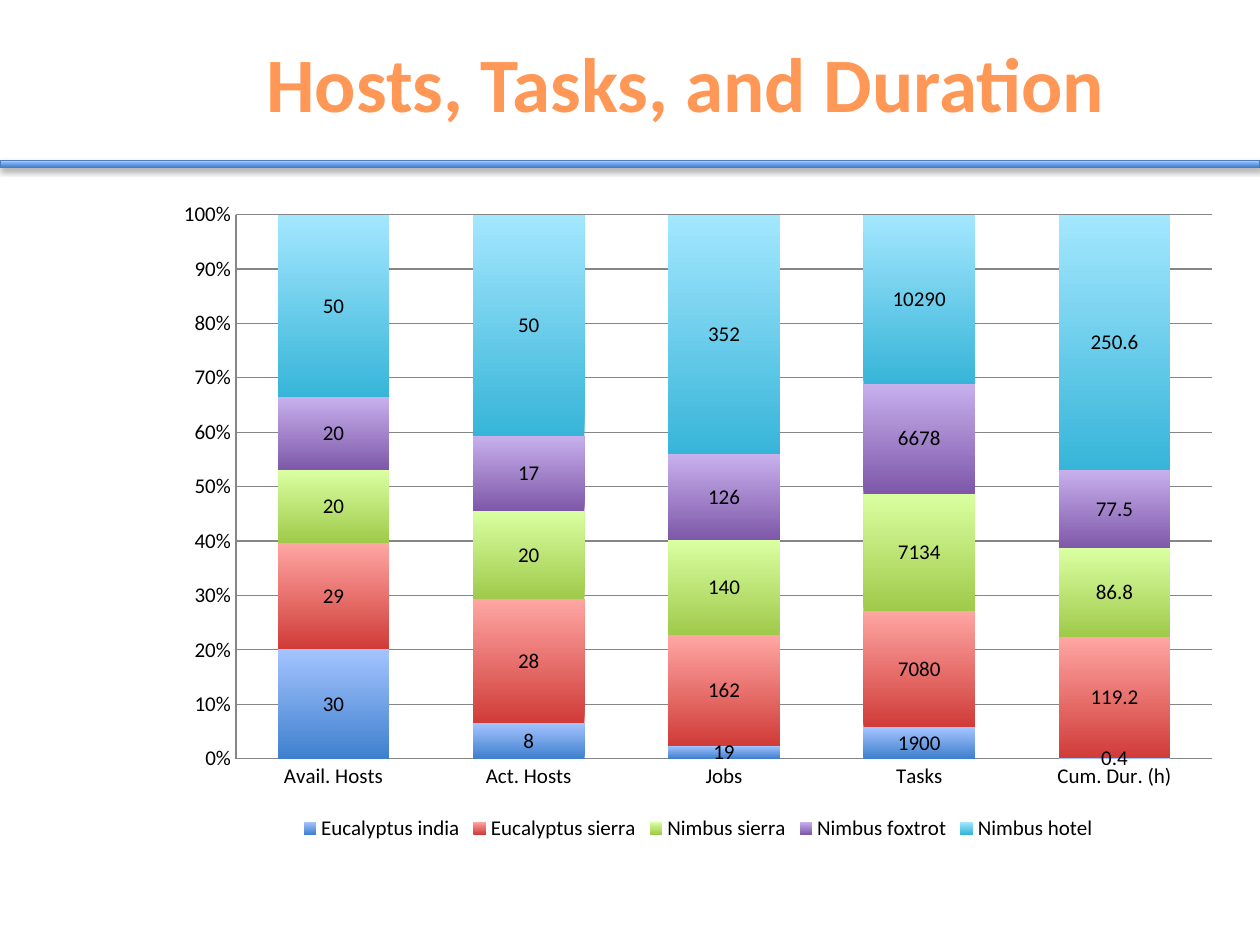
from lxml.etree import SubElement
from pptx import Presentation
from pptx.chart.data import CategoryChartData
from pptx.dml.color import RGBColor
from pptx.enum.chart import XL_CHART_TYPE, XL_LABEL_POSITION, XL_LEGEND_POSITION, XL_TICK_MARK
from pptx.enum.shapes import MSO_SHAPE
from pptx.enum.text import MSO_ANCHOR, PP_ALIGN
from pptx.oxml.ns import qn
from pptx.util import Inches, Pt

ORANGE = RGBColor(0xFF, 0x98, 0x56)
BLACK = RGBColor(0x00, 0x00, 0x00)
GRAY = RGBColor(0x86, 0x86, 0x86)
RULE_LINE = RGBColor(0x4B, 0x7E, 0xBC)
BLUE = (RGBColor(0x3F, 0x80, 0xCE), RGBColor(0xA4, 0xC4, 0xFF))
RED = (RGBColor(0xD0, 0x3C, 0x38), RGBColor(0xFF, 0xA6, 0xA3))
GREEN = (RGBColor(0x9F, 0xCA, 0x4A), RGBColor(0xDA, 0xFF, 0xA2))
PURPLE = (RGBColor(0x7E, 0x58, 0xA9), RGBColor(0xC8, 0xB0, 0xED))
CYAN = (RGBColor(0x37, 0xB5, 0xD8), RGBColor(0xA4, 0xE7, 0xFF))

CATEGORIES = ["Avail. Hosts", "Act. Hosts", "Jobs", "Tasks", "Cum. Dur. (h)"]
CLOUDS = [
    ("Eucalyptus india", BLUE, (30, 8, 19, 1900, 0.4)),
    ("Eucalyptus sierra", RED, (29, 28, 162, 7080, 119.2)),
    ("Nimbus sierra", GREEN, (20, 20, 140, 7134, 86.8)),
    ("Nimbus foxtrot", PURPLE, (20, 17, 126, 6678, 77.5)),
    ("Nimbus hotel", CYAN, (50, 50, 352, 10290, 250.6)),
]


class SlideBuilder:
    """Holds the style and the slide; boxes are shares of the slide's size."""

    font_name = "Calibri"

    def __init__(self, presentation):
        self.width = presentation.slide_width
        self.height = presentation.slide_height
        self.slide = presentation.slides.add_slide(presentation.slide_layouts[5])

    def box(self, left, top, width, height):
        return (int(left * self.width), int(top * self.height),
                int(width * self.width), int(height * self.height))

    def style(self, font, size, color, bold=False):
        font.name = self.font_name
        font.size = Pt(size)
        font.bold = bold
        font.color.rgb = color

    def shade(self, fill, colors):
        """Fills from the first colour at the bottom to the second at the top."""
        fill.gradient()
        fill.gradient_angle = 90
        for stop, color in zip(fill.gradient_stops, colors):
            stop.color.rgb = color

    def rule(self, box):
        bar = self.slide.shapes.add_shape(MSO_SHAPE.RECTANGLE, *self.box(*box))
        self.shade(bar.fill, BLUE)
        bar.line.color.rgb = RULE_LINE
        bar.line.width = Pt(0.75)
        bar.shadow.inherit = False
        effects = bar.element.spPr.find(qn("a:effectLst"))
        shadow = SubElement(effects, qn("a:outerShdw"), blurRad=str(Pt(3.1)),
                            dist=str(Pt(1.8)), dir="5400000", rotWithShape="0")
        color = SubElement(shadow, qn("a:srgbClr"), val=str(BLACK))
        SubElement(color, qn("a:alpha"), val="35000")

    def title(self, text, box):
        title = self.slide.shapes.title
        title.left, title.top, title.width, title.height = self.box(*box)
        title.text_frame.vertical_anchor = MSO_ANCHOR.MIDDLE
        paragraph = title.text_frame.paragraphs[0]
        paragraph.alignment = PP_ALIGN.CENTER
        run = paragraph.add_run()
        run.text = text
        self.style(run.font, 44, ORANGE, bold=True)

    def stacked_chart(self, categories, rows, box):
        data = CategoryChartData()
        data.categories = categories
        for name, _, values in rows:
            data.add_series(name, values)
        chart = self.slide.shapes.add_chart(
            XL_CHART_TYPE.COLUMN_STACKED_100, *self.box(*box), data).chart
        self.style(chart.font, 12, BLACK)
        chart.has_title = False
        chart.has_legend = True
        chart.legend.position = XL_LEGEND_POSITION.BOTTOM
        chart.legend.include_in_layout = False

        plot = chart.plots[0]
        plot.vary_by_categories = False
        plot.gap_width = 75
        plot.overlap = 100
        for series, (_, colors, _) in zip(plot.series, rows):
            self.shade(series.format.fill, colors)
            labels = series.data_labels
            labels.show_value = True
            labels.position = XL_LABEL_POSITION.CENTER
            self.style(labels.font, 12, BLACK)

        for axis in (chart.category_axis, chart.value_axis):
            axis.major_tick_mark = XL_TICK_MARK.NONE
            axis.minor_tick_mark = XL_TICK_MARK.NONE
            axis.format.line.color.rgb = GRAY
        axis = chart.value_axis
        axis.has_major_gridlines = True
        axis.major_gridlines.format.line.color.rgb = GRAY
        axis.tick_labels.number_format = "0%"
        axis.tick_labels.number_format_is_linked = False


def main():
    presentation = Presentation()
    presentation.slide_width = Inches(10)
    presentation.slide_height = Inches(7.5)
    builder = SlideBuilder(presentation)
    builder.rule((0, 0.17, 1, 0.007))
    builder.title("Hosts, Tasks, and Duration", (0.139, 0.003, 0.811, 0.167))
    builder.stacked_chart(CATEGORIES, CLOUDS, (0.129, 0.2, 0.85, 0.695))
    presentation.save("out.pptx")


if __name__ == "__main__":
    main()
